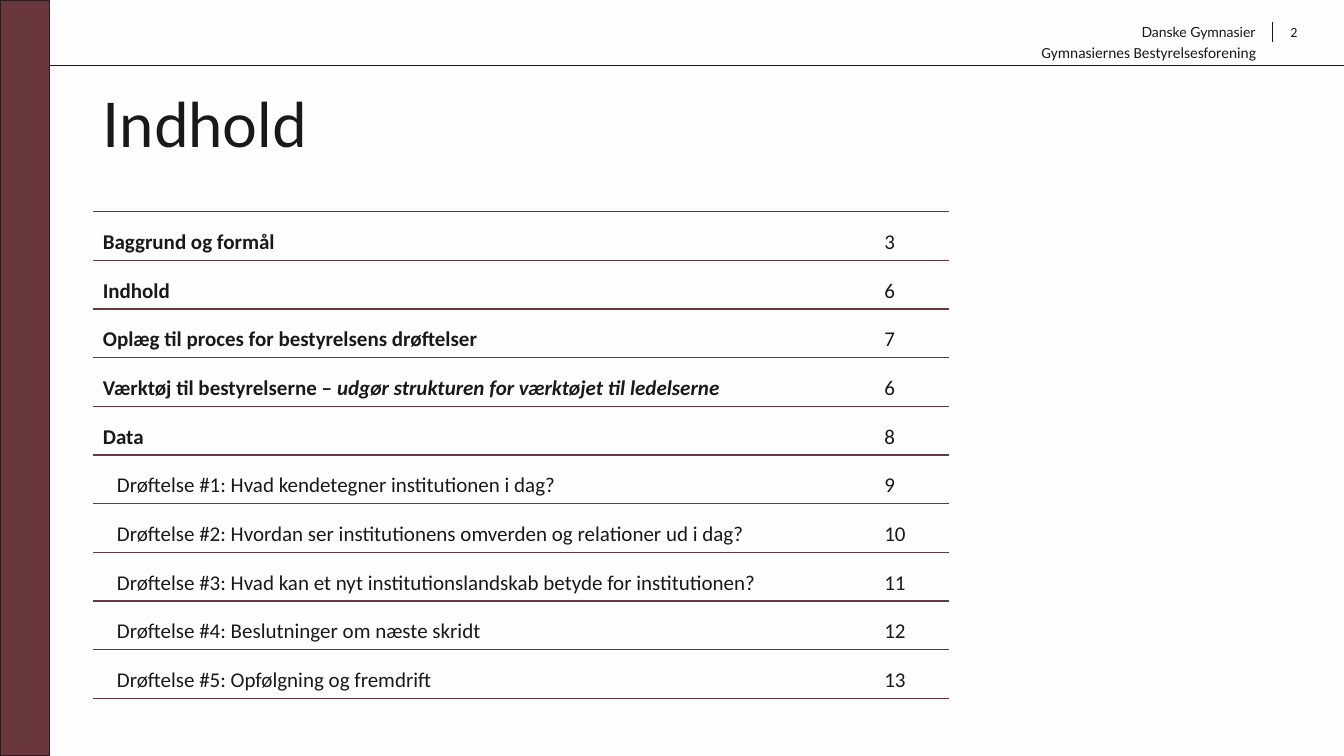
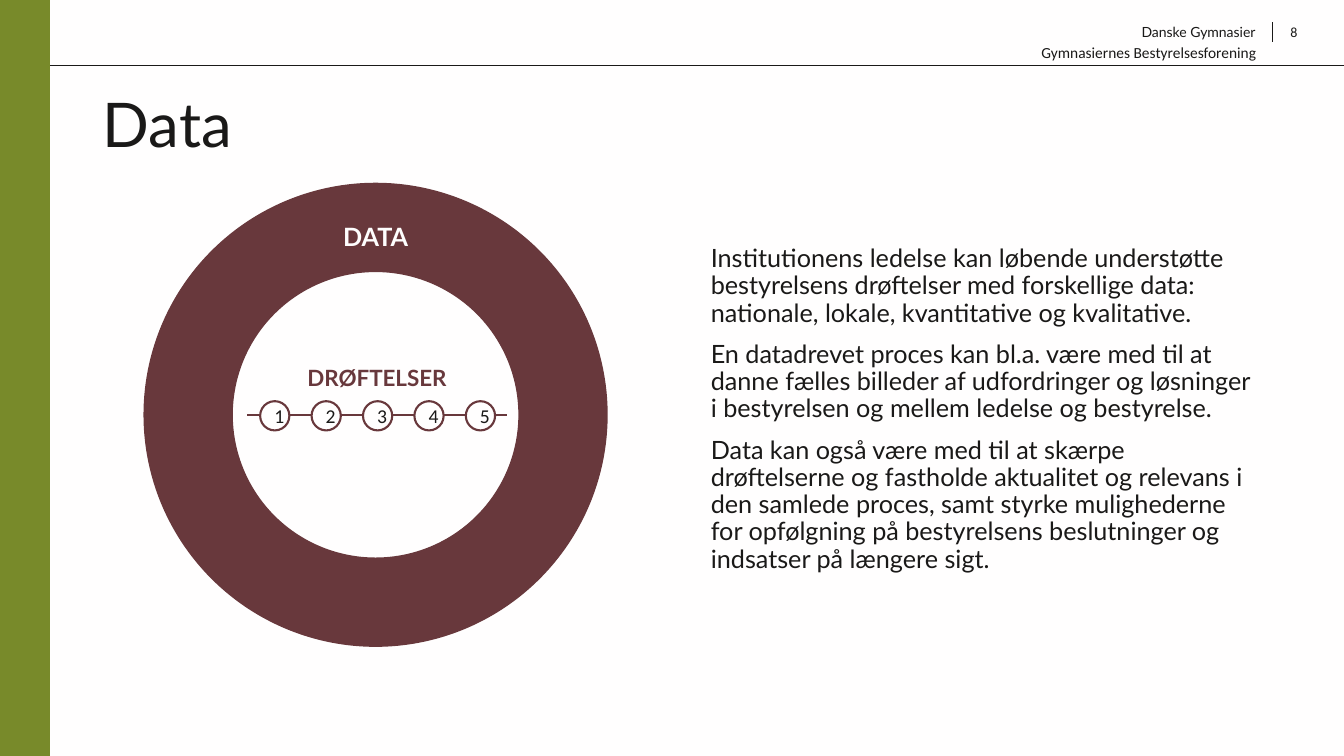
from dataclasses import dataclass

from lxml.etree import SubElement
from pptx import Presentation
from pptx.dml.color import RGBColor
from pptx.enum.shapes import MSO_CONNECTOR, MSO_SHAPE
from pptx.enum.text import MSO_ANCHOR, MSO_AUTO_SIZE, PP_ALIGN
from pptx.oxml.ns import qn
from pptx.oxml.xmlchemy import OxmlElement
from pptx.util import Inches, Pt


@dataclass(frozen=True)
class Theme:
    paper: str = "FFFEFE"
    ink: str = "1A1918"
    wine: str = "68383C"
    wine_edge: str = "2E191A"
    olive: str = "788A2A"
    heading_font: str = "Lato"
    text_font: str = "Calibri"
    title: int = 44
    body: int = 18
    ring_label: int = 18
    steps_label: int = 16
    contents: int = 15
    step: int = 14
    association: int = 11
    header: int = 10


THEME = Theme()
SLIDE_WIDTH, SLIDE_HEIGHT = 13.33, 7.5

ORGANISATION = "Danske Gymnasier"
ASSOCIATION = "Gymnasiernes Bestyrelsesforening"

CONTENTS_TITLE = "Indhold"
CHAPTERS = [
    ("Baggrund og formål", "", "3"),
    ("Indhold", "", "6"),
    ("Oplæg til proces for bestyrelsens drøftelser", "", "7"),
    ("Værktøj til bestyrelserne – ", "udgør strukturen for værktøjet til ledelserne", "6"),
    ("Data", "", "8"),
]
DISCUSSIONS = [
    ("Drøftelse #1: Hvad kendetegner institutionen i dag?", "9"),
    ("Drøftelse #2: Hvordan ser institutionens omverden og relationer ud i dag?", "10"),
    ("Drøftelse #3: Hvad kan et nyt institutionslandskab betyde for institutionen?", "11"),
    ("Drøftelse #4: Beslutninger om næste skridt", "12"),
    ("Drøftelse #5: Opfølgning og fremdrift", "13"),
]

DATA_TITLE = "Data"
DATA_TEXT = [
    "Institutionens ledelse kan løbende understøtte bestyrelsens drøftelser med "
    "forskellige data: nationale, lokale, kvantitative og kvalitative.",
    "En datadrevet proces kan bl.a. være med til at danne fælles billeder af "
    "udfordringer og løsninger i bestyrelsen og mellem ledelse og bestyrelse.",
    "Data kan også være med til at skærpe drøftelserne og fastholde aktualitet og "
    "relevans i den samlede proces, samt styrke mulighederne for opfølgning på "
    "bestyrelsens beslutninger og indsatser på længere sigt.",
]
RING_LABEL = "DATA"
STEPS_LABEL = "DRØFTELSER"
STEPS = ["1", "2", "3", "4", "5"]


def rgb(value):
    return RGBColor.from_string(value)


def inches(*lengths):
    return [Inches(length) for length in lengths]


def add_run(paragraph, text, size, font=THEME.text_font, color=THEME.ink, bold=False, italic=False):
    run = paragraph.add_run()
    run.text = text
    run.font.size = Pt(size)
    run.font.name = font
    run.font.color.rgb = rgb(color)
    run.font.bold = bold
    run.font.italic = italic


def add_label(slide, box, text, size, align=PP_ALIGN.LEFT, anchor=MSO_ANCHOR.TOP, **style):
    frame = slide.shapes.add_textbox(*inches(*box)).text_frame
    frame.word_wrap = True
    frame.vertical_anchor = anchor
    frame.paragraphs[0].alignment = align
    add_run(frame.paragraphs[0], text, size, **style)


def add_line(slide, start, end, color, width):
    line = slide.shapes.add_connector(MSO_CONNECTOR.STRAIGHT, *inches(*start, *end))
    line.line.color.rgb = rgb(color)
    line.line.width = Pt(width)
    line._element.spPr.append(OxmlElement("a:effectLst"))


def add_figure(slide, kind, box, fill, edge, width):
    figure = slide.shapes.add_shape(kind, *inches(*box))
    figure.shadow.inherit = False
    figure.fill.solid()
    figure.fill.fore_color.rgb = rgb(fill)
    figure.line.color.rgb = rgb(edge)
    figure.line.width = Pt(width)
    return figure


def place(placeholder, box):
    placeholder.left, placeholder.top, placeholder.width, placeholder.height = inches(*box)
    frame = placeholder.text_frame
    frame.auto_size = MSO_AUTO_SIZE.NONE
    frame.vertical_anchor = MSO_ANCHOR.TOP
    return frame


def add_page(deck, layout, title, number, bar, bar_edge):
    slide = deck.slides.add_slide(deck.slide_layouts.get_by_name(layout))
    add_line(slide, (0, 0.65), (SLIDE_WIDTH, 0.65), THEME.ink, 0.5)
    add_line(slide, (12.62, 0.22), (12.62, 0.42), THEME.ink, 0.75)
    add_figure(slide, MSO_SHAPE.RECTANGLE, (0, 0, 0.49, SLIDE_HEIGHT), bar, bar_edge, 1)
    add_label(slide, (11.05, 0.18, 1.5, 0.27), ORGANISATION, THEME.header,
              PP_ALIGN.RIGHT, font=THEME.heading_font)
    add_label(slide, (12.7, 0.18, 0.49, 0.4), number, THEME.header)
    add_label(slide, (10.23, 0.38, 2.47, 0.29), ASSOCIATION, THEME.association)
    heading = place(slide.shapes.title, (0.92, 0.89, 11.5, 1.45)).paragraphs[0]
    heading.alignment = PP_ALIGN.LEFT
    heading.line_spacing = 0.9
    add_run(heading, title, THEME.title, THEME.heading_font)
    return slide


def rule_cell(cell):
    cell.fill.background()
    properties = cell._tc.get_or_add_tcPr()
    for position, side in enumerate(("lnL", "lnR", "lnT", "lnB")):
        border = OxmlElement(f"a:{side}")
        if side in ("lnT", "lnB"):
            border.set("w", str(Pt(1)))
            fill = SubElement(border, qn("a:solidFill"))
            SubElement(fill, qn("a:srgbClr")).set("val", THEME.wine)
        else:
            SubElement(border, qn("a:noFill"))
        properties.insert(position, border)


def fill_cell(cell, runs, indent=0):
    rule_cell(cell)
    cell.margin_left = Inches(0.1 + indent)
    paragraph = cell.text_frame.paragraphs[0]
    paragraph.line_spacing = 1.5
    for text, bold, italic in runs:
        add_run(paragraph, text, THEME.contents, bold=bold, italic=italic)


def build_contents(deck):
    slide = add_page(deck, "Title Only", CONTENTS_TITLE, "2", THEME.wine, THEME.wine_edge)
    entries = []
    for name, remark, page in CHAPTERS:
        runs = [(name, True, False)]
        if remark:
            runs.append((remark, True, True))
        entries.append((runs, 0, page))
    entries += [([(name, False, False)], 0.14, page) for name, page in DISCUSSIONS]

    column_widths = (7.75, 0.74)
    contents = slide.shapes.add_table(
        len(entries), len(column_widths), *inches(0.92, 2.1, sum(column_widths), 4.83)).table
    contents.first_row = contents.horz_banding = False
    for column, width in zip(contents.columns, column_widths):
        column.width = Inches(width)
    for row, (runs, indent, page) in enumerate(entries):
        fill_cell(contents.cell(row, 0), runs, indent)
        fill_cell(contents.cell(row, 1), [(page, False, False)])


def build_data(deck):
    slide = add_page(deck, "Title and Content", DATA_TITLE, "8", THEME.olive, THEME.olive)
    body = place(slide.placeholders[1], (6.95, 2.39, 5.56, 4.37))
    for index, text in enumerate(DATA_TEXT):
        paragraph = body.add_paragraph() if index else body.paragraphs[0]
        properties = paragraph._p.get_or_add_pPr()
        properties.set("marL", "0")
        properties.set("indent", "0")
        SubElement(properties, qn("a:buNone"))
        paragraph.line_spacing = 0.9
        paragraph.space_before = Pt(10 if index else 0)
        add_run(paragraph, text, THEME.body, THEME.heading_font)

    ring = add_figure(slide, MSO_SHAPE.DONUT, (1.43, 1.82, 4.59, 4.59), THEME.wine, THEME.wine, 1)
    ring.adjustments[0] = 0.19
    add_line(slide, (2.45, 4.12), (5.03, 4.12), THEME.wine, 1.5)
    for index, number in enumerate(STEPS):
        step = add_figure(slide, MSO_SHAPE.OVAL, (2.58 + index * 0.51, 3.98, 0.29, 0.29),
                          THEME.paper, THEME.wine, 1.5)
        paragraph = step.text_frame.paragraphs[0]
        paragraph.alignment = PP_ALIGN.CENTER
        add_run(paragraph, number, THEME.step)
    for box, text, size, color in (
        ((2.94, 3.51, 1.6, 0.47), STEPS_LABEL, THEME.steps_label, THEME.wine),
        ((3, 2.11, 1.45, 0.47), RING_LABEL, THEME.ring_label, THEME.paper),
    ):
        add_label(slide, box, text, size, PP_ALIGN.CENTER, MSO_ANCHOR.MIDDLE,
                  font=THEME.heading_font, color=color, bold=True)


def main():
    deck = Presentation()
    deck.slide_width, deck.slide_height = inches(SLIDE_WIDTH, SLIDE_HEIGHT)
    backdrop = deck.slide_master.background.fill
    backdrop.solid()
    backdrop.fore_color.rgb = rgb(THEME.paper)
    build_contents(deck)
    build_data(deck)
    deck.save("out.pptx")


if __name__ == "__main__":
    main()
